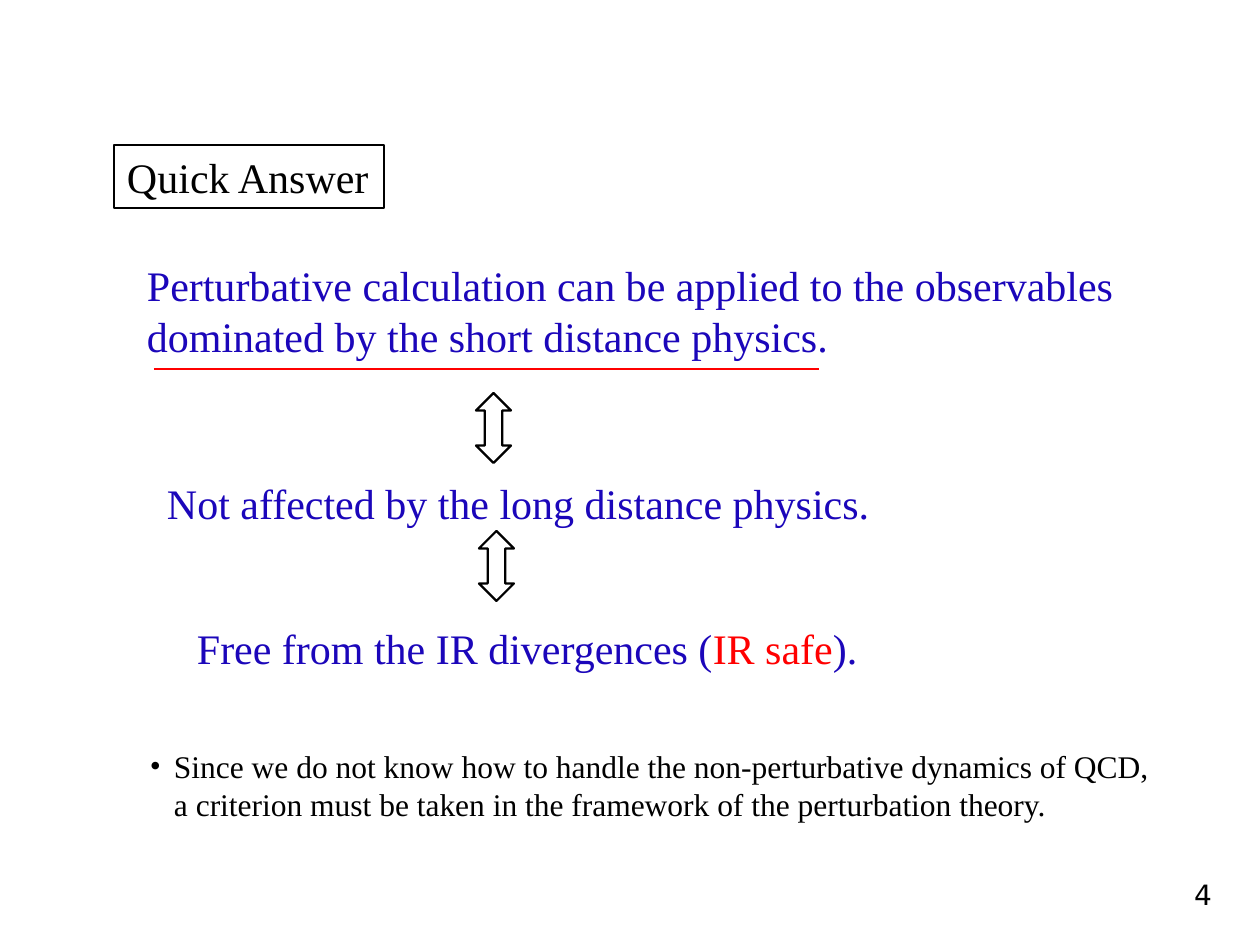
from lxml.etree import SubElement
from pptx import Presentation
from pptx.dml.color import RGBColor
from pptx.enum.shapes import MSO_CONNECTOR as CONN, MSO_SHAPE as SHAPE
from pptx.enum.text import MSO_ANCHOR as ANCHOR, MSO_AUTO_SIZE as FIT, PP_ALIGN as ALIGN
from pptx.oxml.ns import qn
from pptx.util import Emu, Pt

PX = 914400 / 126
SERIF, SANS = "Times New Roman", "DejaVu Sans"
BLACK, BLUE, RED = "000000", "1B06BA", "FF0000"


def px(n):
    return Emu(round(n * PX))


def color(code):
    return RGBColor.from_string(code)


def write(sp, paragraphs, size=24, font=SERIF, align=ALIGN.LEFT, anchor=ANCHOR.TOP):
    """Fill a shape with paragraphs, each a list of (text, colour) runs."""
    tf = sp.text_frame
    frame = dict(word_wrap=False, auto_size=FIT.NONE, vertical_anchor=anchor,
                 margin_left=px(13), margin_right=px(13),
                 margin_top=px(6), margin_bottom=px(6))
    for name, value in frame.items():
        setattr(tf, name, value)
    for i, runs in enumerate(paragraphs):
        p = tf.paragraphs[0] if i == 0 else tf.add_paragraph()
        for name, value in dict(alignment=align, space_before=Pt(0), line_spacing=1.0).items():
            setattr(p, name, value)
        for text, code in runs:
            r = p.add_run()
            r.text = text
            for name, value in dict(name=font, size=Pt(size), bold=False).items():
                setattr(r.font, name, value)
            r.font.color.rgb = color(code)
    return tf


def add_text(s, box, paragraphs, **fmt):
    sp = s.shapes.add_textbox(*map(px, box))
    return write(sp, paragraphs, **fmt)


def add_title(s, box, text):
    sp = s.shapes.title
    sp.left, sp.top, sp.width, sp.height = map(px, box)
    sp.line.color.rgb = color(BLACK)
    sp.line.width = Pt(0.75)
    write(sp, [[(text, BLACK)]])


def add_arrow(s, x, y):
    sp = s.shapes.add_shape(SHAPE.UP_DOWN_ARROW, px(x), px(y), px(35), px(70))
    sp.shadow.inherit = False
    sp.fill.background()
    sp.line.color.rgb = color(BLACK)
    sp.line.width = Pt(1.25)


def add_underline(s, x, y, width):
    line = s.shapes.add_connector(CONN.STRAIGHT, px(x), px(y), px(x + width), px(y))
    line.line.color.rgb = color(RED)
    line.line.width = Pt(1.5)
    SubElement(line._element.spPr, qn("a:effectLst"))


def add_statements(s, x, y):
    """Three equivalent statements joined by double arrows."""
    add_text(s, (x, y, 1010, 115), [
        [("Perturbative calculation can be applied to the observables", BLUE)],
        [("dominated by the short distance physics.", BLUE)]])
    add_underline(s, x + 20, y + 115, 665)
    add_arrow(s, x + 342, y + 139)
    add_text(s, (x + 20, y + 218, 735, 63),
             [[("Not affected by the long distance physics.", BLUE)]])
    add_arrow(s, x + 345, y + 277)
    add_text(s, (x + 50, y + 363, 692, 63),
             [[("Free from the IR divergences (", BLUE), ("IR safe", RED), (").", BLUE)]])


def add_remark(s, box, lines):
    """A bulleted first line, with the next lines aligned to its text."""
    tf = add_text(s, box, [[(line, BLACK)] for line in lines], size=18)
    for i, p in enumerate(tf.paragraphs):
        pPr = p._p.get_or_add_pPr()
        pPr.set("marL", str(px(24)))
        pPr.set("indent", str(px(0 if i else -24)))
        if i == 0:
            SubElement(pPr, qn("a:buFont")).set("typeface", SERIF)
            SubElement(pPr, qn("a:buChar")).set("char", "•")


def main():
    prs = Presentation()
    prs.slide_width, prs.slide_height = px(1260), px(945)
    s = prs.slides.add_slide(prs.slide_layouts[5])

    add_title(s, (114, 145, 270, 63), "Quick Answer")
    add_statements(s, 134, 254)
    add_remark(s, (137, 741, 1058, 89), [
        "Since we do not know how to handle the non-perturbative dynamics of QCD,",
        "a criterion must be taken in the framework of the perturbation theory."])

    # Page number
    add_text(s, (1130, 871, 95, 47), [[("4", BLACK)]], size=16, font=SANS,
             align=ALIGN.RIGHT, anchor=ANCHOR.MIDDLE)
    prs.save("out.pptx")


if __name__ == "__main__":
    main()
